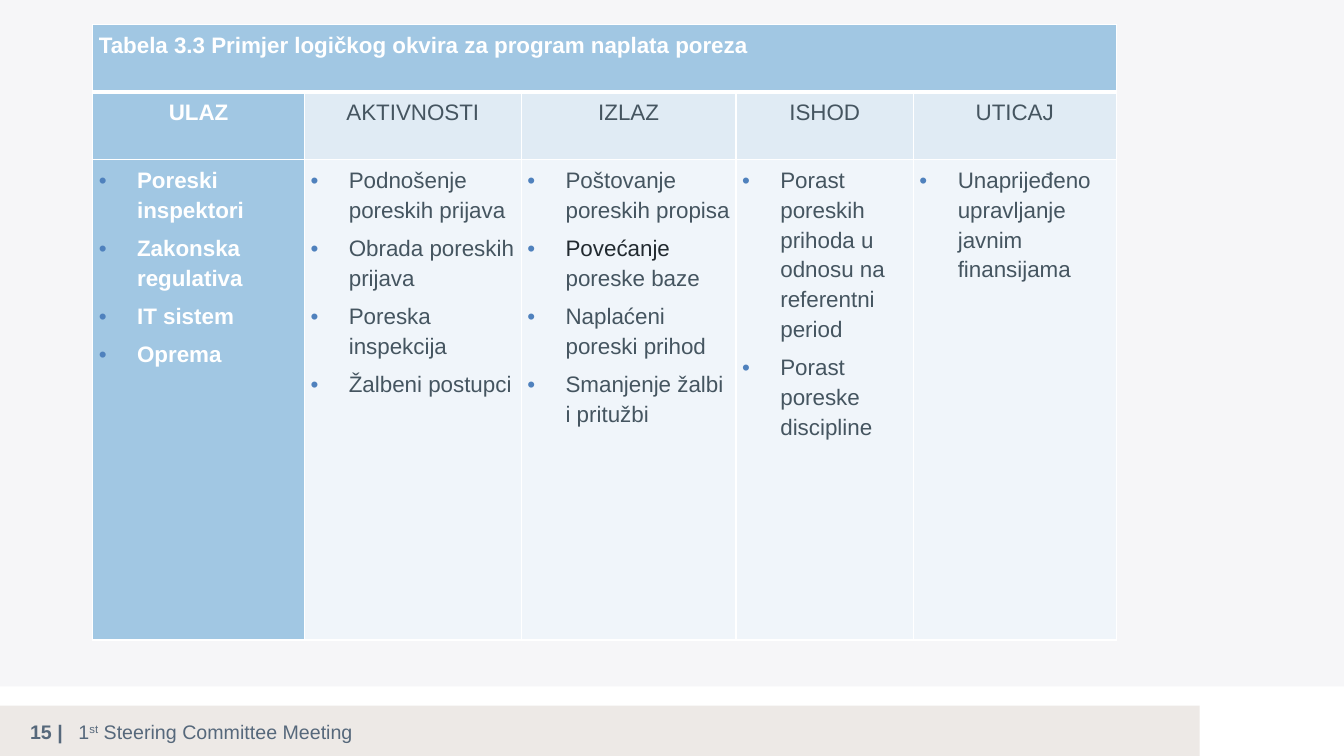
from lxml import etree
from pptx import Presentation
from pptx.dml.color import RGBColor
from pptx.enum import shapes, text
from pptx.oxml import ns
from pptx.util import Inches, Pt

WHITE = RGBColor(0xFF, 0xFF, 0xFF)
BACKDROP = RGBColor(0xF6, 0xF6, 0xF8)
FOOTER = RGBColor(0xED, 0xE9, 0xE6)
FOOTER_TEXT = RGBColor(0x56, 0x68, 0x7B)
BLUE = RGBColor(0xA1, 0xC7, 0xE3)
HEADER_BLUE = RGBColor(0xE0, 0xEB, 0xF4)
BODY_BLUE = RGBColor(0xF0, 0xF5, 0xFA)
TEXT = RGBColor(0x45, 0x55, 0x60)
DARK_TEXT = RGBColor(0x22, 0x2A, 0x30)
BULLET = RGBColor(0x4F, 0x81, 0xBD)

TITLE = "Tabela 3.3 Primjer logičkog okvira za program naplata poreza"
COLUMNS = [
    ("ULAZ", 2.1, ["Poreski inspektori", "Zakonska regulativa", "IT sistem", "Oprema"]),
    ("AKTIVNOSTI", 2.15, ["Podnošenje poreskih prijava", "Obrada poreskih prijava",
                          "Poreska inspekcija", "Žalbeni postupci"]),
    ("IZLAZ", 2.13, ["Poštovanje poreskih propisa", "Povećanje poreske baze",
                     "Naplaćeni poreski prihod", "Smanjenje žalbi i pritužbi"]),
    ("ISHOD", 1.76, ["Porast poreskih prihoda u odnosu na referentni period",
                     "Porast poreske discipline"]),
    ("UTICAJ", 2.01, ["Unaprijeđeno upravljanje javnim finansijama"]),
]
ROW_HEIGHTS = [0.67, 0.67, 4.77]
DARK_WORD = "Povećanje"


def add_run(paragraph, words, size, color, bold=False):
    run = paragraph.add_run()
    run.text = words
    run.font.name = "Arial"
    run.font.size = Pt(size)
    run.font.bold = bold
    run.font.color.rgb = color
    return run


def format_cell(cell, fill, top_width, bottom_width):
    cell.margin_left = cell.margin_right = Inches(0.06)
    cell.margin_top = cell.margin_bottom = Inches(0.04)
    properties = cell._tc.get_or_add_tcPr()
    for side, width in (("L", 1), ("R", 1), ("T", top_width), ("B", bottom_width)):
        line = etree.SubElement(properties, ns.qn(f"a:ln{side}"), w=str(Pt(width)))
        solid = etree.SubElement(line, ns.qn("a:solidFill"))
        etree.SubElement(solid, ns.qn("a:srgbClr"), val=str(WHITE))
    cell.fill.solid()
    cell.fill.fore_color.rgb = fill


presentation = Presentation()
presentation.slide_width = Inches(13.33)
presentation.slide_height = Inches(7.5)
slide = presentation.slides.add_slide(presentation.slide_layouts[6])

for top, width, height, color in [(7, 11.9, 0.5, FOOTER), (0, 13.33, 6.81, BACKDROP)]:
    panel = slide.shapes.add_shape(
        shapes.MSO_SHAPE.RECTANGLE, 0, Inches(top), Inches(width), Inches(height))
    panel.shadow.inherit = False
    panel.fill.solid()
    panel.fill.fore_color.rgb = color
    panel.line.fill.background()

footer_boxes = [
    (0.68, 7.09, 10.39, 0.33, False, ["1", "st", " Steering Committee Meeting"]),
    (0.2, 7.07, 0.71, 0.37, True, ["15 |"]),
]
for left, top, width, height, bold, parts in footer_boxes:
    box = slide.shapes.add_textbox(Inches(left), Inches(top), Inches(width), Inches(height))
    box.text_frame.word_wrap = True
    box.text_frame.vertical_anchor = text.MSO_ANCHOR.MIDDLE
    for part in parts:
        run = add_run(box.text_frame.paragraphs[0], part, 14, FOOTER_TEXT, bold)
        if part == "st":
            run._r.get_or_add_rPr().set("baseline", "30000")

table = slide.shapes.add_table(
    len(ROW_HEIGHTS), len(COLUMNS), Inches(0.92), Inches(0.24), Inches(10.15),
    Inches(sum(ROW_HEIGHTS))).table
for row, height in zip(table.rows, ROW_HEIGHTS):
    row.height = Inches(height)

for index, (heading, width, items) in enumerate(COLUMNS):
    table.columns[index].width = Inches(width)
    first = index == 0
    color = WHITE if first else TEXT
    title_cell, heading_cell, body_cell = (table.cell(row, index) for row in range(3))
    format_cell(title_cell, BLUE, 1, 3)
    format_cell(heading_cell, BLUE if first else HEADER_BLUE, 3, 1)
    format_cell(body_cell, BLUE if first else BODY_BLUE, 1, 1)

    paragraph = heading_cell.text_frame.paragraphs[0]
    paragraph.alignment = text.PP_ALIGN.CENTER
    paragraph.line_spacing = 1.2
    paragraph.space_after = Pt(6)
    add_run(paragraph, heading, 16, color, first)

    for number, item in enumerate(items):
        frame = body_cell.text_frame
        paragraph = frame.add_paragraph() if number else frame.paragraphs[0]
        paragraph.line_spacing = 1.2
        paragraph.space_after = Pt(6)
        properties = paragraph._p.get_or_add_pPr()
        properties.set("marL", str(Inches(0.38)))
        properties.set("indent", str(Inches(-0.38)))
        bullet_color = etree.SubElement(properties, ns.qn("a:buClr"))
        etree.SubElement(bullet_color, ns.qn("a:srgbClr"), val=str(BULLET))
        etree.SubElement(properties, ns.qn("a:buFont"), typeface="Arial")
        etree.SubElement(properties, ns.qn("a:buChar"), char="•")
        if item.startswith(DARK_WORD):
            add_run(paragraph, DARK_WORD, 16, DARK_TEXT)
            item = item.removeprefix(DARK_WORD)
        add_run(paragraph, item, 16, color, first)

table.cell(0, 0).merge(table.cell(0, len(COLUMNS) - 1))
paragraph = table.cell(0, 0).text_frame.paragraphs[0]
paragraph.alignment = text.PP_ALIGN.JUSTIFY
paragraph.line_spacing = 1.2
add_run(paragraph, TITLE, 16, WHITE, True)

presentation.save("out.pptx")
